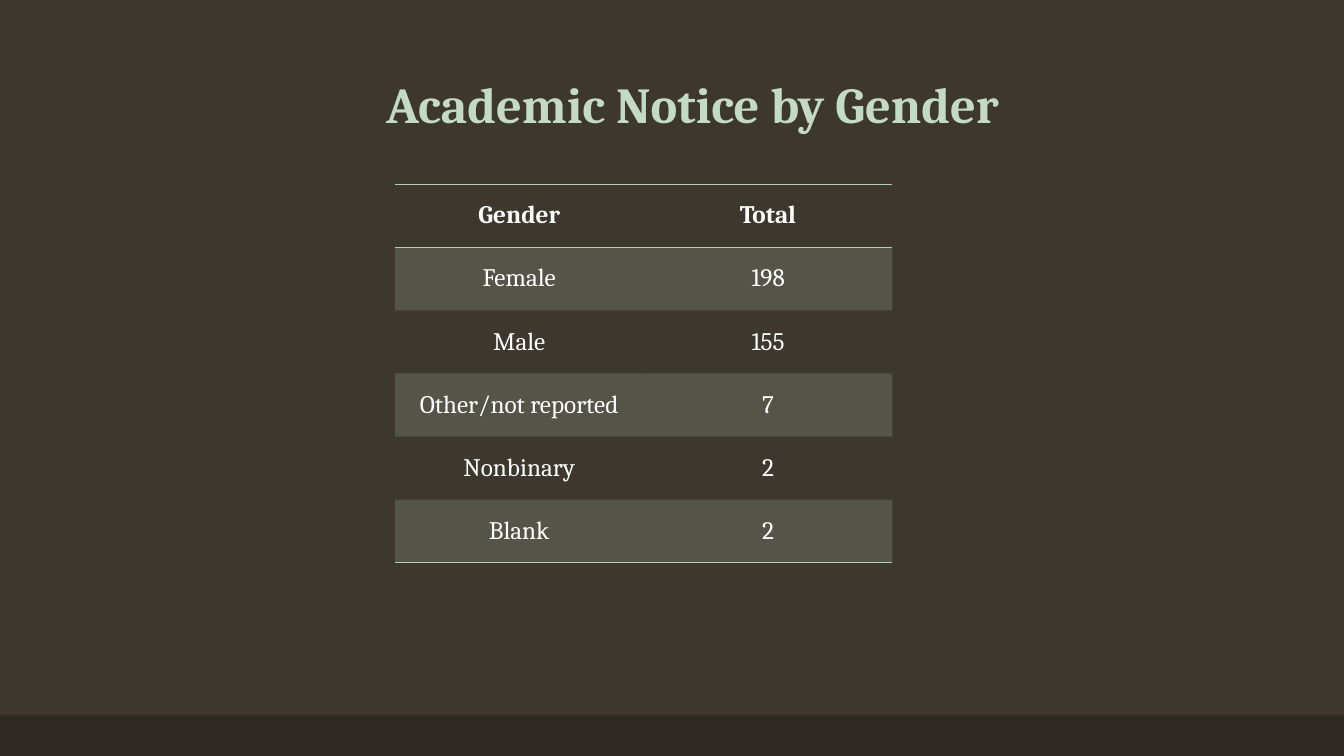
"""Build the slide 'Academic Notice by Gender' with its summary table."""
from lxml.etree import SubElement
from pptx import Presentation
from pptx.dml.color import RGBColor
from pptx.enum.shapes import MSO_SHAPE
from pptx.enum.text import MSO_ANCHOR, PP_ALIGN
from pptx.oxml import parse_xml
from pptx.oxml.ns import nsdecls, qn
from pptx.util import Cm, Pt

TITLE = "Academic Notice by Gender"
ROWS = [
    ("Gender", "Total"),
    ("Female", "198"),
    ("Male", "155"),
    ("Other/not reported", "7"),
    ("Nonbinary", "2"),
    ("Blank", "2"),
]
COLORS = {
    "background": "3D372E",
    "footer": "2E2923",
    "title": "C3DBC5",
    "accent": "B2D0B4",
    "text": "FFFFFF",
}
FONT = "Cambria"
BAND_OPACITY = 20
SLIDE_W, SLIDE_H = Cm(33.87), Cm(19.05)
FOOTER_H = Cm(1.02)
TABLE_X, TABLE_Y = Cm(9.95), Cm(4.64)
COL_W, ROW_H = Cm(6.27), Cm(1.59)
NO_STYLE_NO_GRID = "{2D5ABB26-0587-4C30-8999-92F81FD0307C}"


def rgb(name):
    return RGBColor.from_string(COLORS[name])


def write(tf, text, size=18, color="text", bold=False):
    tf.word_wrap = True
    p = tf.paragraphs[0]
    p.alignment = PP_ALIGN.CENTER
    r = p.add_run()
    r.text = text
    r.font.name = FONT
    r.font.size = Pt(size)
    r.font.bold = bold
    r.font.color.rgb = rgb(color)


def add_border(cell, tag, index):
    cell._tc.get_or_add_tcPr().insert(index, parse_xml(
        f'<a:{tag} {nsdecls("a")} w="12700"><a:solidFill>'
        f'<a:srgbClr val="{COLORS["accent"]}"/></a:solidFill></a:{tag}>'))


def fill_band(cell):
    cell.fill.solid()
    cell.fill.fore_color.rgb = rgb("accent")
    clr = cell._tc.tcPr.find(".//" + qn("a:srgbClr"))
    SubElement(clr, qn("a:alpha"), val=str(BAND_OPACITY * 1000))


def add_footer(s):
    sp = s.shapes.add_shape(
        MSO_SHAPE.RECTANGLE, 0, SLIDE_H - FOOTER_H, SLIDE_W, FOOTER_H)
    sp.shadow.inherit = False
    sp.fill.solid()
    sp.fill.fore_color.rgb = rgb("footer")
    sp.line.fill.background()


def add_title(s):
    sp = s.shapes.title
    sp.left, sp.top, sp.width, sp.height = Cm(5.92), Cm(1.7), Cm(23.06), Cm(1.8)
    sp.text_frame.vertical_anchor = MSO_ANCHOR.MIDDLE
    write(sp.text_frame, TITLE, size=36, color="title", bold=True)


def add_gender_table(s):
    n_rows, n_cols = len(ROWS), len(ROWS[0])
    table = s.shapes.add_table(n_rows, n_cols, TABLE_X, TABLE_Y,
                               COL_W * n_cols, ROW_H * n_rows).table
    table._tbl.tblPr.find(qn("a:tableStyleId")).text = NO_STYLE_NO_GRID
    table.horz_banding = False
    for col in table.columns:
        col.width = COL_W
    for i, row in enumerate(ROWS):
        table.rows[i].height = ROW_H
        for j, text in enumerate(row):
            cell = table.cell(i, j)
            cell.vertical_anchor = MSO_ANCHOR.MIDDLE
            write(cell.text_frame, text, bold=i == 0)
            if i % 2:
                fill_band(cell)
            else:
                cell.fill.background()
            if i in (0, n_rows - 1):
                add_border(cell, "lnB", 0)
            if i == 0:
                add_border(cell, "lnT", 0)


def main():
    prs = Presentation()
    prs.slide_width, prs.slide_height = SLIDE_W, SLIDE_H
    s = prs.slides.add_slide(prs.slide_layouts[5])
    s.background.fill.solid()
    s.background.fill.fore_color.rgb = rgb("background")
    add_footer(s)
    add_title(s)
    add_gender_table(s)
    prs.save("out.pptx")


if __name__ == "__main__":
    main()
